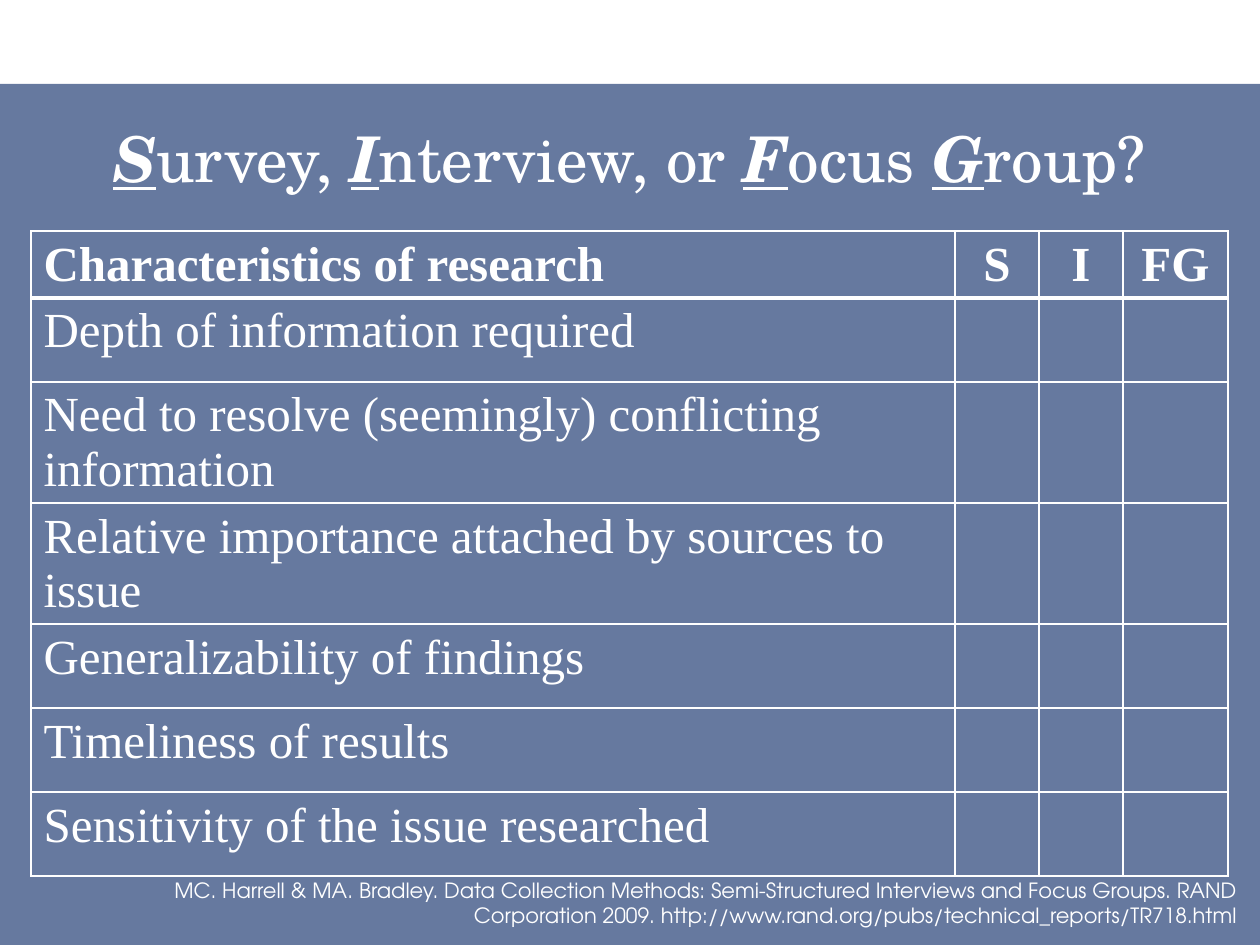
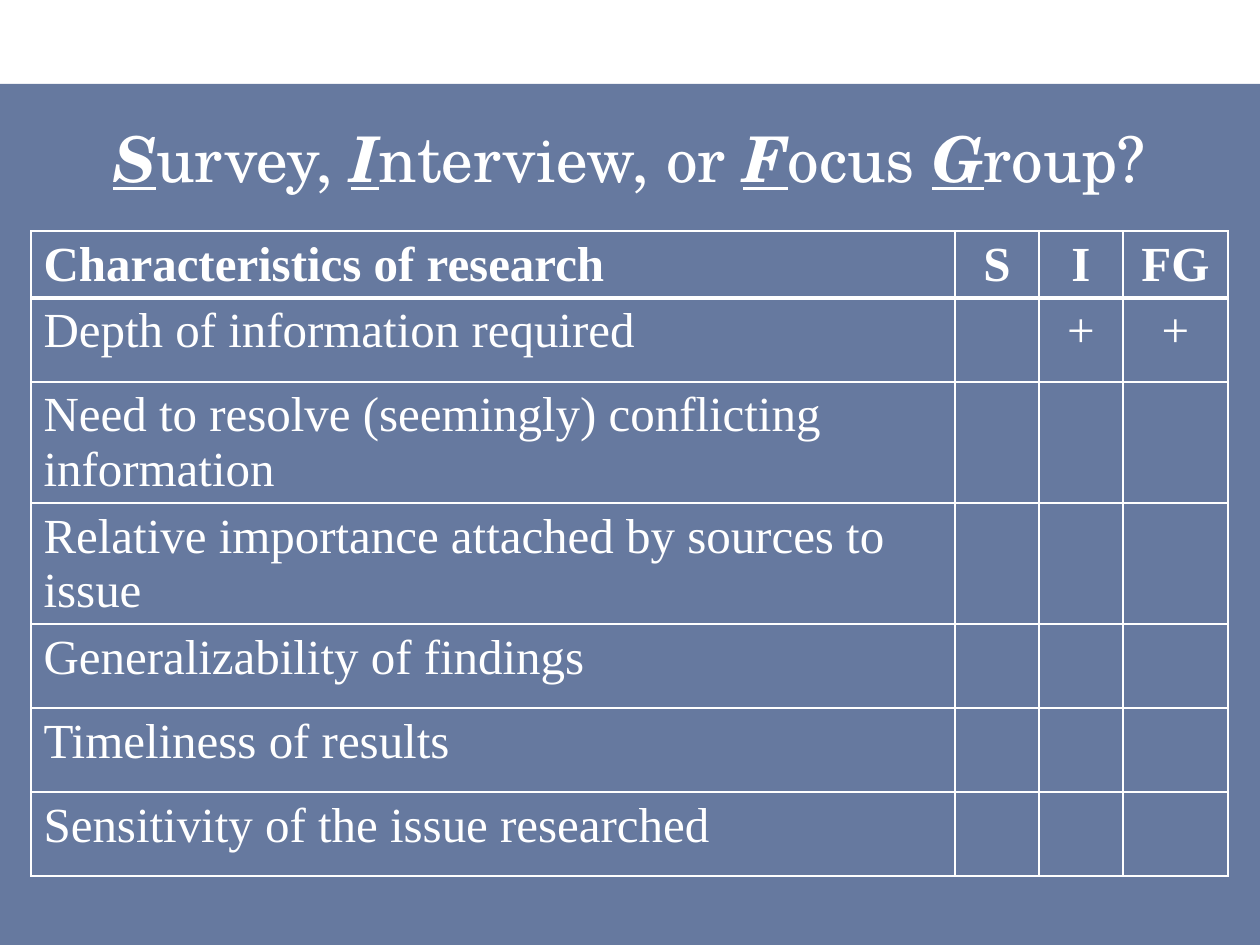
from lxml.etree import SubElement
from pptx import Presentation
from pptx.dml.color import RGBColor
from pptx.enum.shapes import MSO_SHAPE as SHAPE
from pptx.enum.text import MSO_ANCHOR as ANCHOR, MSO_AUTO_SIZE as AUTO, PP_ALIGN as ALIGN
from pptx.oxml.ns import qn
from pptx.util import Emu, Pt

TITLE = [("S", True), ("urvey, ", False), ("I", True), ("nterview, or ", False),
         ("F", True), ("ocus ", False), ("G", True), ("roup?", False)]
HEADINGS = ["Characteristics of research", "S", "I", "FG"]
CHARACTERISTICS = [
    "Depth of information required",
    "Need to resolve (seemingly) conflicting information",
    "Relative importance attached by sources to issue",
    "Generalizability of findings",
    "Timeliness of results",
    "Sensitivity of the issue researched",
]
CITATION = ("MC. Harrell & MA. Bradley. Data Collection Methods: Semi-Structured "
            "Interviews and Focus Groups. RAND Corporation 2009. "
            "http://www.rand.org/pubs/technical_reports/TR718.html")
# Marks are keyed by (characteristic, column heading).
SLIDES = [
    {"marks": {}, "citation": CITATION},
    {"marks": {(CHARACTERISTICS[0], "I"): "+", (CHARACTERISTICS[0], "FG"): "+"}},
]

COLORS = {"navy": "002060", "white": "FFFFFF"}
FONTS = {"title": "TeX Gyre Schola", "table": "Times New Roman", "note": "TeX Gyre Adventor"}
PX = 914400 // 126
SLIDE_W, SLIDE_H = 1260, 945
BAND = (0, 84, 1260, 861)
TITLE_BOX = (31, 105, 1197, 104)
CITATION_BOX = (53, 871, 1197, 63)
TABLE_LEFT, TABLE_TOP = 31, 231
COL_WIDTHS = [924, 84, 84, 105]
ROW_HEIGHTS = [67, 84, 121, 121, 84, 84, 84]


def px(*lengths):
    return [Emu(n * PX) for n in lengths]


def write(tf, text, font, size, align=ALIGN.LEFT, bold=False):
    """Write a string, or (text, emphasized) pairs, as one paragraph."""
    p = tf.paragraphs[0]
    p.alignment = align
    for part, emphasized in [(text, False)] if isinstance(text, str) else text:
        r = p.add_run()
        r.text = part
        r.font.name, r.font.size = FONTS[font], Pt(size)
        r.font.color.rgb = RGBColor.from_string(COLORS["white"])
        r.font.bold = bold or emphasized
        r.font.italic = r.font.underline = emphasized


def add_band(slide, layout):
    """Draw the translucent band and move it to the layout, behind everything."""
    band = slide.shapes.add_shape(SHAPE.RECTANGLE, *px(*BAND))
    band.shadow.inherit = False
    band.fill.solid()
    band.fill.fore_color.rgb = RGBColor.from_string(COLORS["navy"])
    band.line.fill.background()
    color = band.element.spPr.find(qn("a:solidFill"))[0]
    SubElement(color, qn("a:alpha"), val="60000")
    layout.shapes.element.insert(2, band.element)


def format_cell(cell, row):
    widths = {"L": 1, "R": 1, "T": 3 if row == 1 else 1, "B": 3 if row == 0 else 1}
    tc_pr = cell._tc.get_or_add_tcPr()
    for side, width in widths.items():
        ln = SubElement(tc_pr, qn(f"a:ln{side}"), w=str(Pt(width)))
        fill = SubElement(ln, qn("a:solidFill"))
        SubElement(fill, qn("a:srgbClr"), val=COLORS["white"])
    cell.fill.background()


def add_title(slide):
    title = slide.shapes.title
    title.left, title.top, title.width, title.height = px(*TITLE_BOX)
    tf = title.text_frame
    tf.auto_size, tf.vertical_anchor = AUTO.NONE, ANCHOR.MIDDLE
    write(tf, TITLE, "title", 36, ALIGN.CENTER)


def add_matrix(slide, marks):
    rows = [HEADINGS] + [[name] + [marks.get((name, h), "") for h in HEADINGS[1:]]
                         for name in CHARACTERISTICS]
    box = px(TABLE_LEFT, TABLE_TOP, sum(COL_WIDTHS), sum(ROW_HEIGHTS))
    table = slide.shapes.add_table(len(rows), len(HEADINGS), *box).table
    table.horz_banding = False
    for column, width in zip(table.columns, px(*COL_WIDTHS)):
        column.width = width
    for row, height in zip(table.rows, px(*ROW_HEIGHTS)):
        row.height = height
    for i, row in enumerate(rows):
        for j, text in enumerate(row):
            cell = table.cell(i, j)
            format_cell(cell, i)
            if text:
                write(cell.text_frame, text, "table", 28,
                      ALIGN.CENTER if j else ALIGN.LEFT, bold=i == 0)


def add_citation(slide, text):
    tf = slide.shapes.add_textbox(*px(*CITATION_BOX)).text_frame
    tf.word_wrap = True
    write(tf, text, "note", 12, ALIGN.RIGHT)


def main():
    prs = Presentation()
    prs.slide_width, prs.slide_height = px(SLIDE_W, SLIDE_H)
    layout = prs.slide_layouts[5]
    for i, content in enumerate(SLIDES):
        slide = prs.slides.add_slide(layout)
        if i == 0:
            add_band(slide, layout)
        add_title(slide)
        add_matrix(slide, content["marks"])
        if "citation" in content:
            add_citation(slide, content["citation"])
    prs.save("out.pptx")


if __name__ == "__main__":
    main()
